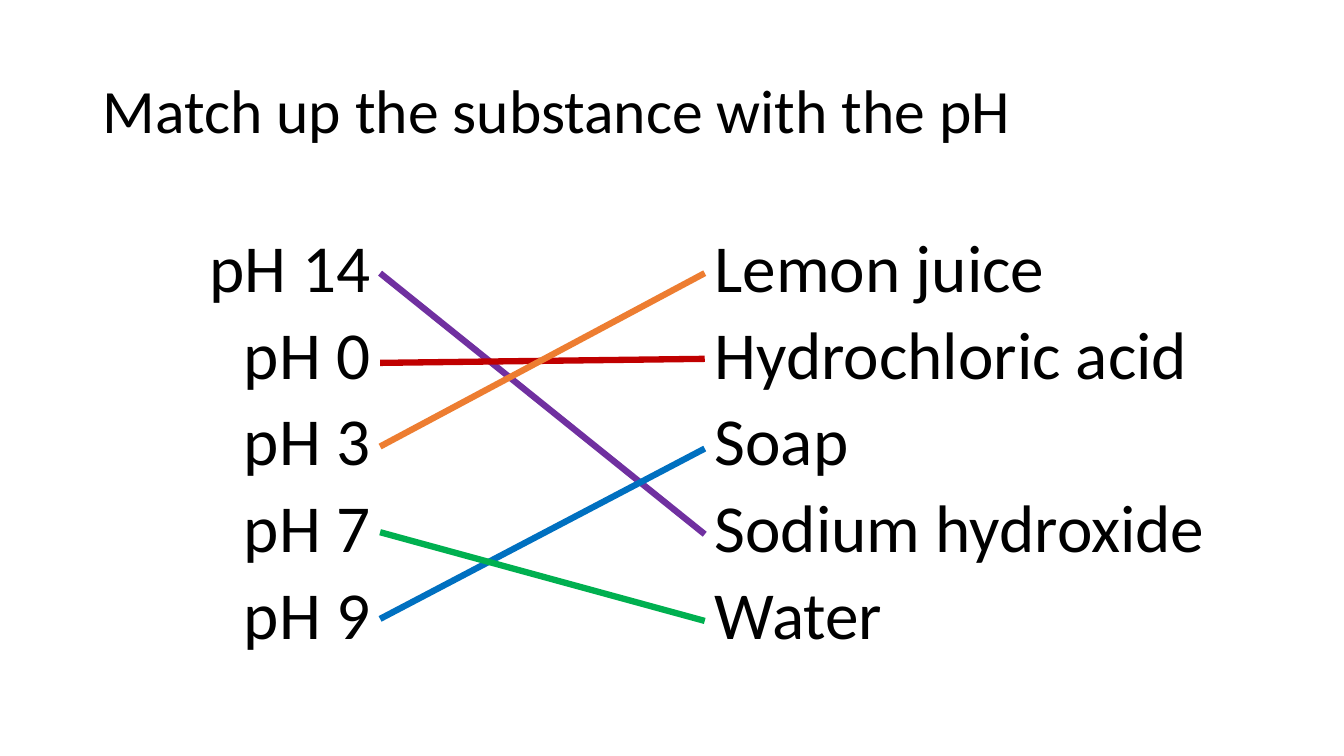
from pptx import Presentation
from pptx.dml.color import RGBColor
from pptx.enum.shapes import MSO_CONNECTOR
from pptx.enum.text import MSO_ANCHOR, PP_ALIGN
from pptx.oxml.ns import qn
from pptx.util import Inches, Pt
from lxml import etree

STRAIGHT = MSO_CONNECTOR.STRAIGHT
TOP, MIDDLE = MSO_ANCHOR.TOP, MSO_ANCHOR.MIDDLE
LEFT, RIGHT = PP_ALIGN.LEFT, PP_ALIGN.RIGHT

BLACK = RGBColor(0x00, 0x00, 0x00)
PURPLE = RGBColor(0x70, 0x30, 0xA0)
RED = RGBColor(0xC0, 0x00, 0x00)
BLUE = RGBColor(0x00, 0x70, 0xC0)
ORANGE = RGBColor(0xED, 0x7D, 0x31)
GREEN = RGBColor(0x00, 0xB0, 0x50)

# Column edges that the matching lines run between
PH_EDGE, SUBSTANCE_EDGE = 3.77, 6.99
COLUMN_TOP, COLUMN_HEIGHT = 2.28, 4.76

PH_VALUES = ["pH 14", "pH 0", "pH 3", "pH 7", "pH 9"]
SUBSTANCES = ["Lemon juice", "Hydrochloric acid", "Soap", "Sodium hydroxide", "Water"]

# Height at the pH column, height at the substance column, colour
MATCHES = [
    (2.71, 5.30, PURPLE),
    (3.60, 3.56, RED),
    (6.14, 4.45, BLUE),
    (4.43, 2.71, ORANGE),
    (5.28, 6.16, GREEN),
]


class MatchingSlide:
    font_name = "Calibri"
    line_width = Pt(4.5)

    def __init__(self, presentation):
        self.slide = presentation.slides.add_slide(presentation.slide_layouts[6])

    def text(self, left, top, width, height, lines, size,
             align=LEFT, anchor=TOP, space_before=0):
        box = self.slide.shapes.add_textbox(
            Inches(left), Inches(top), Inches(width), Inches(height))
        frame = box.text_frame
        frame.word_wrap = True
        frame.vertical_anchor = anchor
        frame.text = "\n".join(lines)
        for paragraph in frame.paragraphs:
            paragraph.alignment = align
            paragraph.line_spacing = 0.9
            paragraph.space_before = Pt(space_before)
            paragraph.font.name = self.font_name
            paragraph.font.size = Pt(size)
            paragraph.font.color.rgb = BLACK

    def column(self, left, width, lines, align):
        self.text(left, COLUMN_TOP, width, COLUMN_HEIGHT, lines, 48,
                  align=align, space_before=10)

    def match(self, start_y, end_y, color):
        connector = self.slide.shapes.add_connector(
            STRAIGHT, Inches(PH_EDGE), Inches(start_y),
            Inches(SUBSTANCE_EDGE), Inches(end_y))
        connector.line.color.rgb = color
        connector.line.width = self.line_width
        etree.SubElement(connector._element.spPr, qn("a:effectLst"))


def main():
    presentation = Presentation()
    presentation.slide_width = Inches(13.33)
    presentation.slide_height = Inches(7.5)
    page = MatchingSlide(presentation)

    # Title
    page.text(0.92, 0.4, 11.5, 1.45, ["Match up the substance with the pH"], 44,
              anchor=MIDDLE)

    # Two columns to match
    page.column(SUBSTANCE_EDGE, 5.67, SUBSTANCES, LEFT)
    page.column(1.34, PH_EDGE - 1.34, PH_VALUES, RIGHT)

    # Answer lines
    for start_y, end_y, color in MATCHES:
        page.match(start_y, end_y, color)

    presentation.save("out.pptx")


if __name__ == "__main__":
    main()
